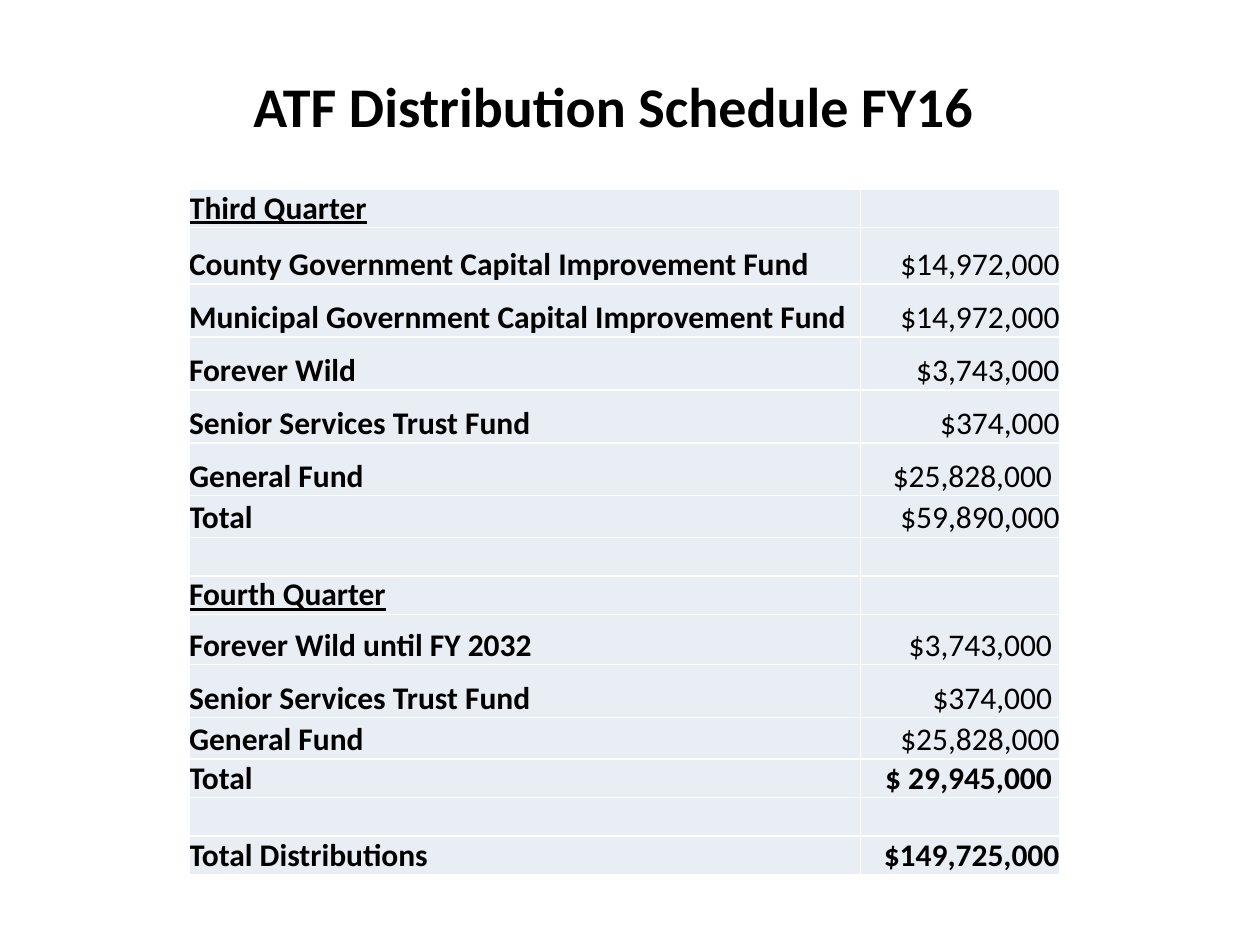
from dataclasses import dataclass

from lxml import etree
from pptx import Presentation
from pptx.dml.color import RGBColor
from pptx.enum.text import MSO_ANCHOR, PP_ALIGN
from pptx.oxml.ns import qn
from pptx.util import Inches, Pt

MIDDLE, BOTTOM = MSO_ANCHOR.MIDDLE, MSO_ANCHOR.BOTTOM
LEFT, CENTER, RIGHT = PP_ALIGN.LEFT, PP_ALIGN.CENTER, PP_ALIGN.RIGHT


@dataclass(frozen=True)
class Theme:
    font: str = "Calibri"
    text: str = "000000"
    cell: str = "E9EDF4"
    border: str = "FFFFFF"
    title_size: int = 32
    body_size: int = 18
    border_width: int = 1


THEME = Theme()
COLUMNS = (5.33, 1.58)
INDENT = 0.06  # right inset of the amounts that stand off the edge

# label, amount, row height, label underlined, amount bold, amount inset
ROWS = [
    ("Third Quarter", "", 0.3, True, False, 0),
    ("County Government Capital Improvement Fund", "$14,972,000", 0.45, False, False, 0),
    ("Municipal Government Capital Improvement Fund", "$14,972,000", 0.42, False, False, 0),
    ("Forever Wild", "$3,743,000", 0.42, False, False, 0),
    ("Senior Services Trust Fund", "$374,000", 0.42, False, False, 0),
    ("General Fund", "$25,828,000", 0.42, False, False, INDENT),
    ("Total", "$59,890,000", 0.33, False, False, 0),
    ("", "", 0.3, False, False, 0),
    ("Fourth Quarter", "", 0.3, True, False, 0),
    ("Forever Wild until FY 2032", "$3,743,000", 0.4, False, False, INDENT),
    ("Senior Services Trust Fund", "$374,000", 0.42, False, False, INDENT),
    ("General Fund", "$25,828,000", 0.33, False, False, 0),
    ("Total", "$ 29,945,000", 0.3, False, True, INDENT),
    ("", "", 0.3, False, False, 0),
    ("Total Distributions", "$149,725,000", 0.3, False, True, 0),
]


def add_run(p, text, size, bold, underline=False):
    r = p.add_run()
    r.text = text
    r.font.name = THEME.font
    r.font.size = Pt(size)
    r.font.bold = bold
    r.font.underline = underline
    r.font.color.rgb = RGBColor.from_string(THEME.text)


def set_borders(cell):
    tc_pr = cell._tc.get_or_add_tcPr()
    for side in ("a:lnL", "a:lnR", "a:lnT", "a:lnB"):
        ln = etree.SubElement(tc_pr, qn(side), w=str(Pt(THEME.border_width)))
        fill = etree.SubElement(ln, qn("a:solidFill"))
        etree.SubElement(fill, qn("a:srgbClr"), val=THEME.border)


def fill_cell(cell, text, align, bold, underline=False, inset=0):
    cell.margin_left = cell.margin_top = cell.margin_bottom = 0
    cell.margin_right = Inches(inset)
    cell.vertical_anchor = BOTTOM
    set_borders(cell)
    cell.fill.solid()
    cell.fill.fore_color.rgb = RGBColor.from_string(THEME.cell)
    p = cell.text_frame.paragraphs[0]
    p.alignment = align
    if text:
        add_run(p, text, THEME.body_size, bold, underline)
    else:
        p.font.size = Pt(THEME.body_size)


def add_title(s, left, top, width, height):
    sp = s.shapes.title
    sp.left, sp.top = Inches(left), Inches(top)
    sp.width, sp.height = Inches(width), Inches(height)
    tf = sp.text_frame
    tf.vertical_anchor = MIDDLE
    p = tf.paragraphs[0]
    p.alignment = CENTER
    add_run(p, "ATF Distribution Schedule FY16", THEME.title_size, True)


def add_schedule(s, left, top):
    height = sum(row[2] for row in ROWS)
    table = s.shapes.add_table(len(ROWS), len(COLUMNS), Inches(left), Inches(top),
                               Inches(sum(COLUMNS)), Inches(height)).table
    table.first_row = table.horz_banding = False
    for column, width in zip(table.columns, COLUMNS):
        column.width = Inches(width)
    for row, (label, amount, height, underline, bold, inset) in zip(table.rows, ROWS):
        row.height = Inches(height)
        fill_cell(row.cells[0], label, LEFT, True, underline)
        fill_cell(row.cells[1], amount, RIGHT, bold, inset=inset)


def main():
    prs = Presentation()
    prs.slide_width, prs.slide_height = Inches(10), Inches(7.5)
    s = prs.slides.add_slide(prs.slide_layouts[5])  # title only
    add_title(s, 0.83, 0.5, 8.08, 0.67)
    add_schedule(s, 1.5, 1.5)
    prs.save("out.pptx")


if __name__ == "__main__":
    main()
